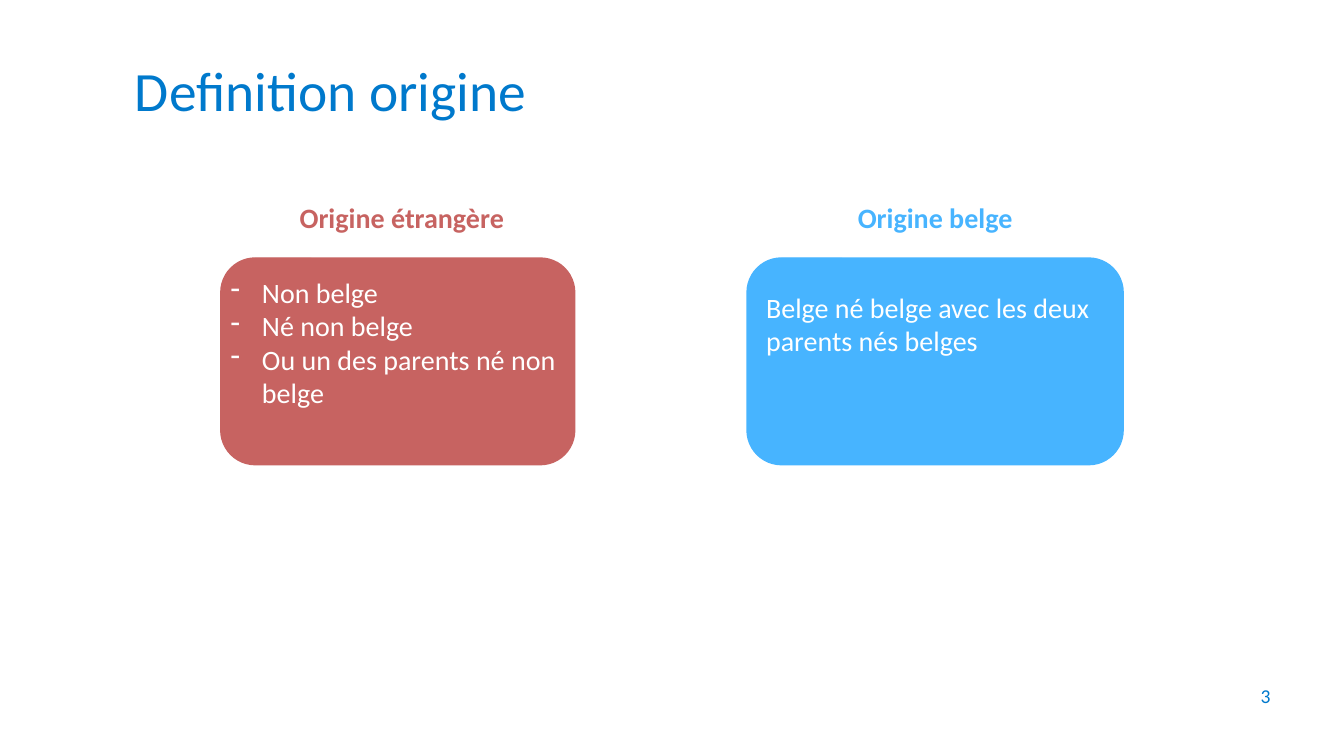
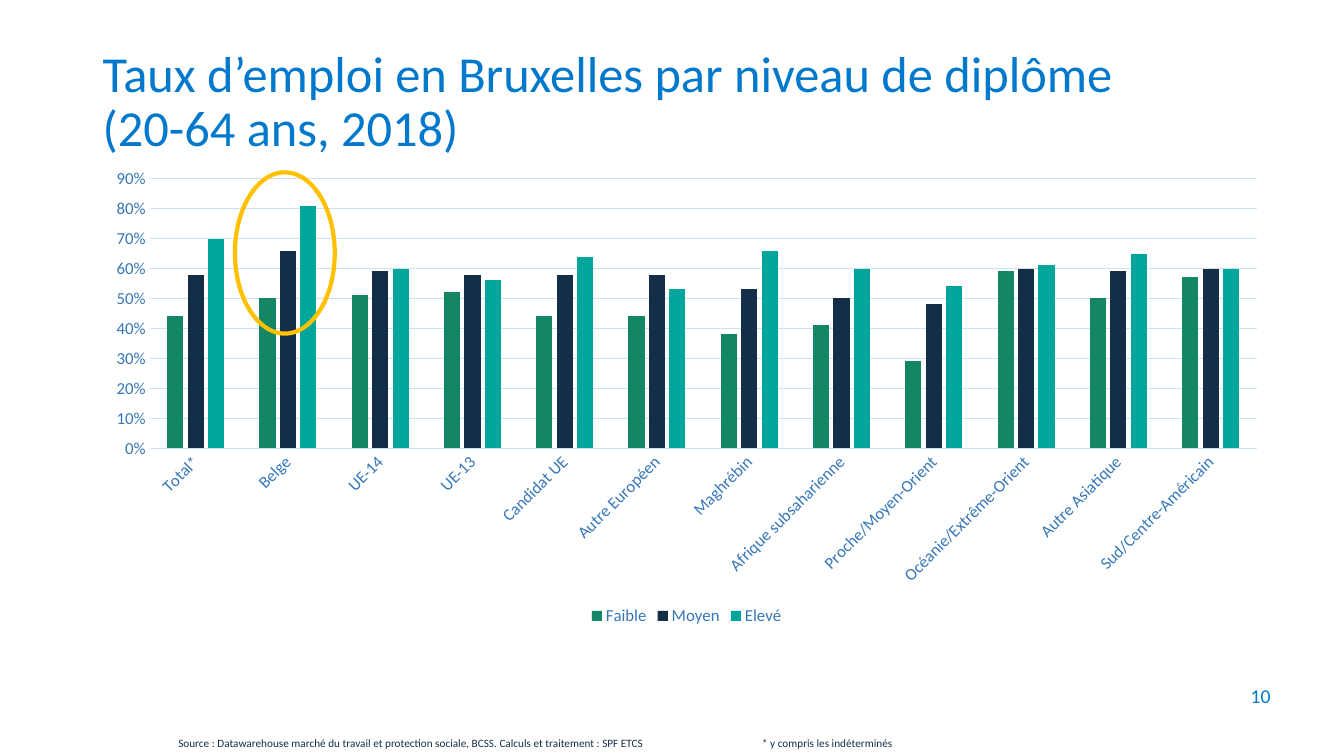
import pptx
import pptx.chart.data
import pptx.dml.color
import pptx.enum.chart
import pptx.enum.shapes
import pptx.enum.text
import pptx.oxml.ns
import pptx.util
from lxml import etree
from pptx.util import Inches

FONT = "Calibri"
BLUE = "0079CC"
RED = "C76361"
SKY = "47B4FF"
NAVY = "152E47"
AXIS_BLUE = "3677B8"
GRID_BLUE = "CFE0F1"
GOLD = "FFC000"
WHITE = "FFFFFF"
ALIGN = pptx.enum.text.PP_ALIGN
MIDDLE = pptx.enum.text.MSO_ANCHOR.MIDDLE
SHAPE = pptx.enum.shapes.MSO_SHAPE


def style_font(font, size, color, bold=False):
    font.name = FONT
    font.size = pptx.util.Pt(size)
    font.bold = bold
    font.color.rgb = pptx.dml.color.RGBColor.from_string(color)


def add_text(slide, box, lines, size, color, bold=False, align=ALIGN.LEFT,
             anchor=pptx.enum.text.MSO_ANCHOR.TOP, spacing=None, bullet=None, wrap=True):
    frame = slide.shapes.add_textbox(*[Inches(v) for v in box]).text_frame
    frame.word_wrap = wrap
    frame.vertical_anchor = anchor
    for i, line in enumerate(lines):
        paragraph = frame.add_paragraph() if i else frame.paragraphs[0]
        paragraph.alignment = align
        if spacing:
            paragraph.line_spacing = spacing
        if bullet:
            properties = paragraph._p.get_or_add_pPr()
            properties.set("marL", str(Inches(0.31)))
            properties.set("indent", str(-Inches(0.31)))
            mark = etree.SubElement(properties, pptx.oxml.ns.qn("a:buChar"))
            mark.set("char", bullet)
        run = paragraph.add_run()
        run.text = line
        style_font(run.font, size, color, bold)


presentation = pptx.Presentation()
presentation.slide_width = Inches(13.33)
presentation.slide_height = Inches(7.5)

pages = [
    ("Definition origine", (1.24, 0.73, 8.19, 0.4), 39.6, "3"),
    ("Taux d’emploi en Bruxelles par niveau de diplôme (20-64 ans, 2018)",
     (0.92, 0.3, 10.41, 1.45), 36, "10"),
]
slides = []
for title, title_box, title_size, number in pages:
    slide = presentation.slides.add_slide(presentation.slide_layouts[6])
    add_text(slide, title_box, [title], title_size, BLUE, anchor=MIDDLE, spacing=0.9)
    add_text(slide, (9.7, 6.7, 3, 0.4), [number], 14, BLUE, align=ALIGN.RIGHT, anchor=MIDDLE)
    slides.append(slide)
definition, employment = slides

origins = [
    ("Origine étrangère", (2.41, 1.94, 3.15, 0.44), RED, 2.19, 3.51,
     ["Non belge", "Né non belge", "Ou un des parents né non belge"],
     (2.19, 2.68, 3.51, 1.45), "-"),
    ("Origine belge", (8.15, 1.94, 2.25, 0.44), SKY, 7.41, 3.73,
     ["Belge né belge avec les deux parents nés belges"],
     (7.5, 2.83, 3.56, 0.77), None),
]
for heading, heading_box, color, left, width, criteria, criteria_box, bullet in origins:
    card = definition.shapes.add_shape(
        SHAPE.ROUNDED_RECTANGLE, Inches(left), Inches(2.56), Inches(width), Inches(2.05))
    card.shadow.inherit = False
    card.fill.solid()
    card.fill.fore_color.rgb = pptx.dml.color.RGBColor.from_string(color)
    card.line.color.rgb = pptx.dml.color.RGBColor.from_string(color)
    card.line.width = pptx.util.Pt(1)
    add_text(definition, heading_box, [heading], 20, color, bold=True, align=ALIGN.CENTER)
    add_text(definition, criteria_box, criteria, 20, WHITE, bullet=bullet)

add_text(employment, (1.67, 7.26, 5.07, 0.24),
         ["Source : Datawarehouse marché du travail et protection sociale, BCSS. "
          "Calculs et traitement : SPF ETCS"], 8, NAVY)
add_text(employment, (7.46, 7.26, 1.51, 0.24), ["* y compris les indéterminés"],
         8, NAVY, wrap=False)

diplomas = [
    ("Faible", "138665", [0.44, 0.5, 0.51, 0.52, 0.44, 0.44, 0.38, 0.41, 0.29, 0.59, 0.5, 0.57]),
    ("Moyen", NAVY, [0.58, 0.66, 0.59, 0.58, 0.58, 0.58, 0.53, 0.5, 0.48, 0.6, 0.59, 0.6]),
    ("Elevé", "00A69C", [0.7, 0.81, 0.6, 0.56, 0.64, 0.53, 0.66, 0.6, 0.54, 0.61, 0.65, 0.6]),
]
rates = pptx.chart.data.CategoryChartData(number_format="0%")
rates.categories = [
    "Total*", "Belge", "UE-14", "UE-13", "Candidat UE", "Autre Européen", "Maghrébin",
    "Afrique subsaharienne", "Proche/Moyen-Orient", "Océanie/Extrême-Orient",
    "Autre Asiatique", "Sud/Centre-Américain",
]
for diploma, color, values in diplomas:
    rates.add_series(diploma, values)

chart = employment.shapes.add_chart(
    pptx.enum.chart.XL_CHART_TYPE.COLUMN_CLUSTERED,
    Inches(0.92), Inches(1.58), Inches(11.78), Inches(4.67), rates).chart
chart.has_title = False
style_font(chart.font, 12, NAVY)
chart.has_legend = True
chart.legend.position = pptx.enum.chart.XL_LEGEND_POSITION.BOTTOM
chart.legend.include_in_layout = False
style_font(chart.legend.font, 12, AXIS_BLUE)

plot = chart.plots[0]
plot.vary_by_categories = False
plot.gap_width = 219
plot.overlap = -27
for series, (diploma, color, values) in zip(plot.series, diplomas):
    series.format.fill.solid()
    series.format.fill.fore_color.rgb = pptx.dml.color.RGBColor.from_string(color)

origin_axis, rate_axis = chart.category_axis, chart.value_axis
for axis in (origin_axis, rate_axis):
    axis.major_tick_mark = pptx.enum.chart.XL_TICK_MARK.NONE
    axis.minor_tick_mark = pptx.enum.chart.XL_TICK_MARK.NONE
    style_font(axis.tick_labels.font, 12, AXIS_BLUE)
for line in (origin_axis.format.line, rate_axis.major_gridlines.format.line):
    line.color.rgb = pptx.dml.color.RGBColor.from_string(GRID_BLUE)
    line.width = pptx.util.Pt(0.75)
rate_axis.format.line.fill.background()
rate_axis.minimum_scale = 0
rate_axis.maximum_scale = 0.9
rate_axis.major_unit = 0.1
rate_axis.tick_labels.number_format = "0%"
rate_axis.tick_labels.number_format_is_linked = False
for label_body in chart.element.xpath(".//c:catAx/c:txPr/a:bodyPr"):
    label_body.set("rot", str(-45 * 60000))

belgian_highlight = employment.shapes.add_shape(
    SHAPE.OVAL, Inches(2.33), Inches(1.71), Inches(0.99), Inches(1.6))
belgian_highlight.shadow.inherit = False
belgian_highlight.fill.background()
belgian_highlight.line.color.rgb = pptx.dml.color.RGBColor.from_string(GOLD)
belgian_highlight.line.width = pptx.util.Pt(3)

presentation.save("out.pptx")
